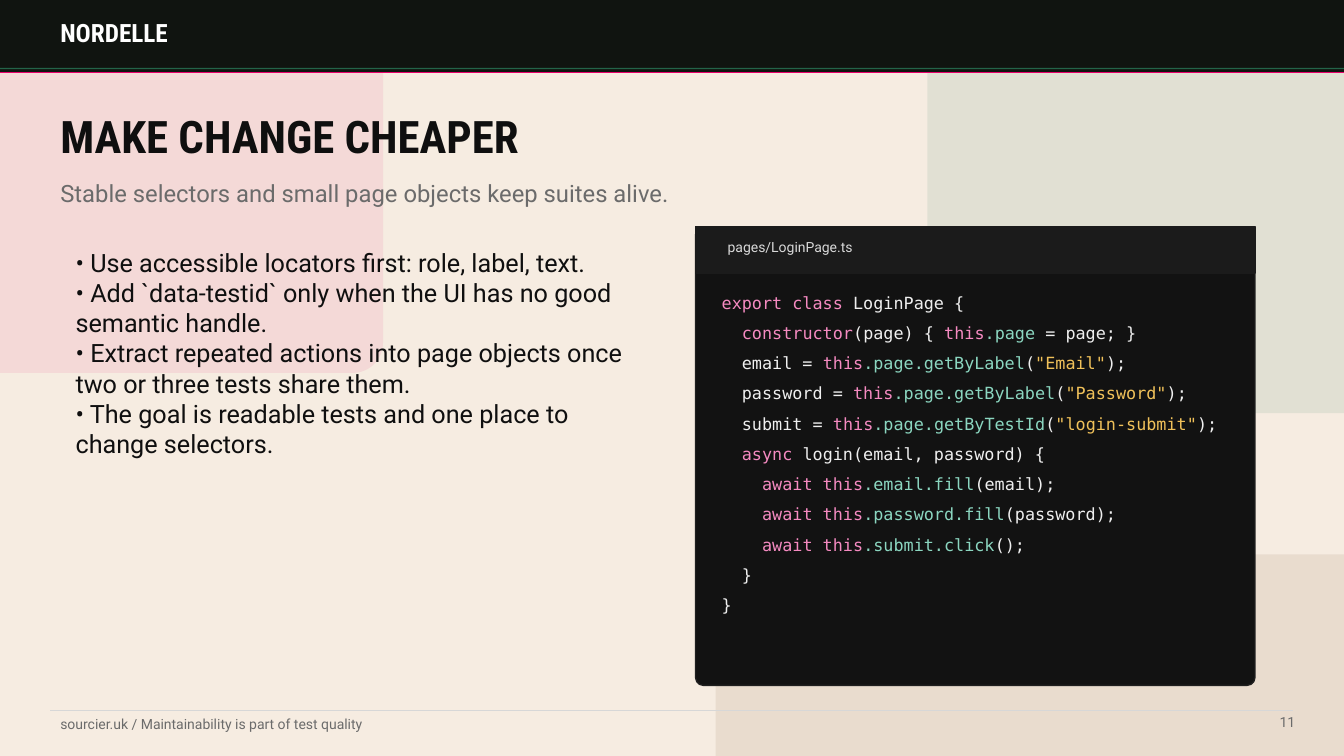
from dataclasses import dataclass
from typing import Any, NamedTuple, Optional

from pptx import Presentation
from pptx.dml.color import RGBColor
from pptx.enum.shapes import MSO_CONNECTOR as Conn, MSO_SHAPE as Geom
from pptx.enum.text import MSO_ANCHOR as Anchor, PP_ALIGN as Align
from pptx.oxml.ns import qn
from pptx.oxml.xmlchemy import OxmlElement
from pptx.util import Inches, Pt

COL = ROW = Inches(0.1)
COLS, ROWS = 133.33, 75
LEFT, RIGHT = 5, 128.3

CREAM = RGBColor(0xF6, 0xEC, 0xE1)
PINK = RGBColor(0xE8, 0x00, 0x6A)
GREEN = RGBColor(0x2A, 0x7D, 0x5B)
SAND = RGBColor(0xE5, 0xD8, 0xC9)
BAR = RGBColor(0x10, 0x14, 0x10)
WHITE = RGBColor(0xFF, 0xFF, 0xFF)
INK = RGBColor(0x0F, 0x0F, 0x0F)
GREY = RGBColor(0x6B, 0x6B, 0x6B)
RULE = RGBColor(0xD7, 0xD7, 0xD7)
PANEL = RGBColor(0x12, 0x12, 0x12)
PANEL_EDGE = RGBColor(0x1F, 0x1F, 0x1F)
TAB = RGBColor(0x1B, 0x1B, 0x1B)
TAB_TEXT = RGBColor(0xD9, 0xD9, 0xD9)
PLAIN = RGBColor(0xEF, 0xEF, 0xEF)
KEYWORD = RGBColor(0xF5, 0x8A, 0xC1)
MEMBER = RGBColor(0x8B, 0xD6, 0xC0)
STRING = RGBColor(0xF0, 0xC1, 0x5A)

SANS, CONDENSED, MONO = "Roboto", "Roboto Condensed", "DejaVu Sans Mono"


class Area(NamedTuple):
    col: float
    row: float
    cols: float
    rows: float


class Token(NamedTuple):
    text: str
    color: RGBColor = PLAIN


Line = list[Token]


@dataclass
class Block:
    area: Area
    fill: RGBColor
    opacity: int = 100
    edge: Optional[RGBColor] = None
    radius: float = 0


@dataclass
class Rule:
    start: float
    end: float
    row: float
    color: RGBColor
    opacity: int = 100


@dataclass
class Text:
    area: Area
    lines: list[Line]
    size: int
    font: str = SANS
    bold: bool = False
    anchor: Anchor = Anchor.MIDDLE
    align: Align = Align.LEFT
    inset: bool = True


def apply(obj: Any, **fmt: Any) -> None:
    for name, value in fmt.items():
        setattr(obj, name, value)


def emu(area: Area) -> list[int]:
    return [round(n * unit) for n, unit in zip(area, (COL, ROW, COL, ROW))]


def set_opacity(sp: Any, percent: int) -> None:
    if percent < 100:
        for color in sp._element.spPr.iter(qn("a:srgbClr")):
            alpha = OxmlElement("a:alpha")
            alpha.set("val", str(percent * 1000))
            color.append(alpha)


def draw_block(s: Any, b: Block) -> None:
    geom = Geom.ROUNDED_RECTANGLE if b.radius else Geom.RECTANGLE
    sp = s.shapes.add_shape(geom, *emu(b.area))
    sp.shadow.inherit = False
    if b.radius:
        sp.adjustments[0] = b.radius / min(b.area.cols, b.area.rows)
    sp.fill.solid()
    sp.fill.fore_color.rgb = b.fill
    if b.edge is None:
        sp.line.fill.background()
    else:
        sp.line.color.rgb = b.edge
        sp.line.width = Pt(1)
    set_opacity(sp, b.opacity)


def draw_rule(s: Any, rule: Rule) -> None:
    x1, y, x2, _ = emu(Area(rule.start, rule.row, rule.end, 0))
    sp = s.shapes.add_connector(Conn.STRAIGHT, x1, y, x2, y)
    sp.line.color.rgb = rule.color
    sp.line.width = Pt(1)
    sp._element.spPr.append(OxmlElement("a:effectLst"))
    set_opacity(sp, rule.opacity)


def draw_text(s: Any, t: Text) -> None:
    tf = s.shapes.add_textbox(*emu(t.area)).text_frame
    apply(tf, word_wrap=True, vertical_anchor=t.anchor)
    if not t.inset:
        apply(tf, margin_left=0, margin_top=0, margin_right=0, margin_bottom=0)
    for i, line in enumerate(t.lines):
        p = tf.add_paragraph() if i else tf.paragraphs[0]
        p.alignment = t.align
        for token in line:
            r = p.add_run()
            r.text = token.text
            apply(r.font, name=t.font, size=Pt(t.size), bold=t.bold)
            r.font.color.rgb = token.color


def locator(field: str, method: str, name: str) -> Line:
    return [Token(f"  {field} = "), Token("this", KEYWORD), Token(f".page.{method}", MEMBER),
            Token("("), Token(f'"{name}"', STRING), Token(");")]


def awaited(action: str, args: str) -> Line:
    return [Token("    "), Token("await this", KEYWORD), Token(f".{action}", MEMBER),
            Token(f"({args});")]


BACKDROP = [
    Block(Area(-21, -12, 59, 49), PINK, 8, radius=3),
    Block(Area(92, -15, 62, 56), GREEN, 10, radius=3),
    Block(Area(71, 55, 81, 34), SAND, 76, radius=3),
    Block(Area(0, 0, COLS, 7.2), BAR, edge=BAR),
]
RULES = [
    Rule(0, COLS, 7.2, PINK),
    Rule(0, COLS, 6.8, GREEN, 76),
    Rule(LEFT, RIGHT, 70.5, RULE),
]
EDITOR = [
    Block(Area(69, 22.5, 55.5, 45.5), PANEL, edge=PANEL_EDGE, radius=0.8),
    Block(Area(69, 22.5, 55.5, 4.6), TAB, edge=TAB),
]
BULLETS = [
    "Use accessible locators first: role, label, text.",
    "Add `data-testid` only when the UI has no good semantic handle.",
    "Extract repeated actions into page objects once two or three tests share them.",
    "The goal is readable tests and one place to change selectors.",
]
CODE: list[Line] = [
    [Token("export class", KEYWORD), Token(" LoginPage {")],
    [Token("  "), Token("constructor", KEYWORD), Token("(page) { "),
     Token("this", KEYWORD), Token(".page", MEMBER), Token(" = page; }")],
    locator("email", "getByLabel", "Email"),
    locator("password", "getByLabel", "Password"),
    locator("submit", "getByTestId", "login-submit"),
    [Token("  "), Token("async", KEYWORD), Token(" login(email, password) {")],
    awaited("email.fill", "email"),
    awaited("password.fill", "password"),
    awaited("submit.click", ""),
    [Token("  }")],
    [Token("}")],
]
TEXTS = [
    Text(Area(LEFT, 1.7, 28, 3), [[Token("NORDELLE", WHITE)]], 18, CONDENSED, True),
    Text(Area(LEFT, 10, 89, 7), [[Token("MAKE CHANGE CHEAPER", INK)]], 32, CONDENSED, True),
    Text(Area(LEFT, 17.2, 104, 3.8),
         [[Token("Stable selectors and small page objects keep suites alive.", GREY)]],
         17, anchor=Anchor.TOP),
    Text(Area(7.5, 24.5, 57.5, 37), [[Token(f"• {b}", INK)] for b in BULLETS],
         18, anchor=Anchor.TOP, inset=False),
    Text(Area(71.2, 23.7, 51.1, 1.6), [[Token("pages/LoginPage.ts", TAB_TEXT)]], 10),
    *(Text(Area(71.6, 28.9 + 3 * i, 50.3, 2.2), [line], 12, MONO, inset=False)
      for i, line in enumerate(CODE)),
    Text(Area(LEFT, 70.8, 60, 2),
         [[Token("sourcier.uk / Maintainability is part of test quality", GREY)]], 10),
    Text(Area(117.5, 70.8, 11, 2), [[Token("11", GREY)]], 10,
         anchor=Anchor.TOP, align=Align.RIGHT, inset=False),
]


def main() -> None:
    prs = Presentation()
    apply(prs, slide_width=round(COLS * COL), slide_height=ROWS * ROW)
    s = prs.slides.add_slide(prs.slide_layouts[6])
    s.background.fill.solid()
    s.background.fill.fore_color.rgb = CREAM
    for block in BACKDROP:
        draw_block(s, block)
    for rule in RULES:
        draw_rule(s, rule)
    for block in EDITOR:
        draw_block(s, block)
    for text in TEXTS:
        draw_text(s, text)
    prs.save("out.pptx")


if __name__ == "__main__":
    main()
